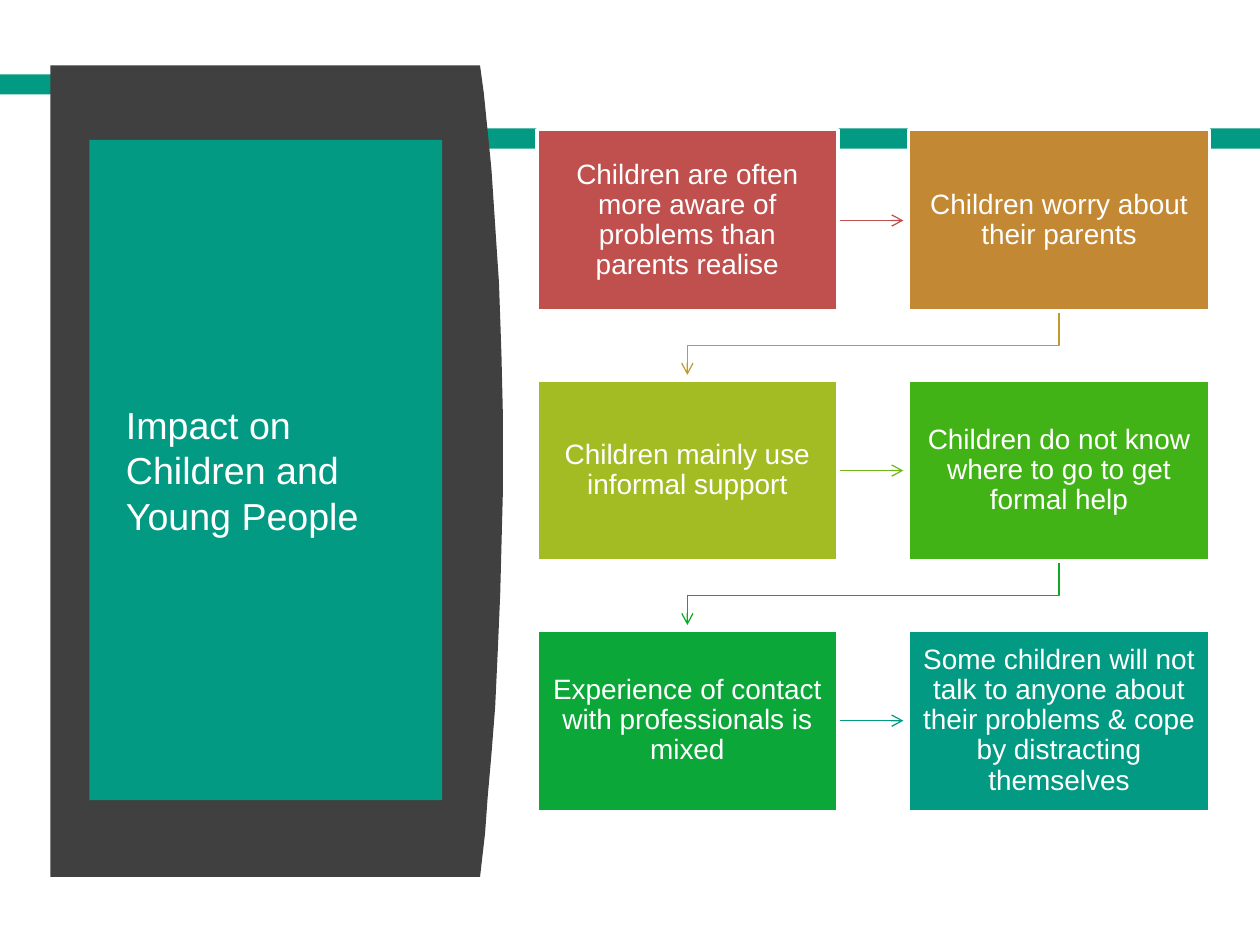
from pptx import Presentation
from pptx.dml.color import RGBColor
from pptx.enum.shapes import MSO_CONNECTOR as CONNECTOR, MSO_SHAPE as SHAPE
from pptx.enum.text import MSO_ANCHOR as ANCHOR, PP_ALIGN as ALIGN
from pptx.oxml.ns import qn
from pptx.util import Inches, Pt
from lxml.etree import SubElement

WHITE = RGBColor(0xFF, 0xFF, 0xFF)
TEAL = RGBColor(0x02, 0x9A, 0x83)
CHARCOAL = RGBColor(0x40, 0x40, 0x40)
RED = RGBColor(0xC0, 0x50, 0x4D)
OCHRE = RGBColor(0xC2, 0x88, 0x34)
OLIVE = RGBColor(0xA4, 0xBC, 0x24)
GREEN = RGBColor(0x42, 0xB3, 0x17)
EMERALD = RGBColor(0x0B, 0xA7, 0x38)
GOLD_LINE = RGBColor(0xC1, 0x9A, 0x30)
LIME_LINE = RGBColor(0x74, 0xB7, 0x1D)
GREEN_LINE = RGBColor(0x0E, 0xAA, 0x24)

STEPS = [
    ("Children are often more aware of problems than parents realise", RED, RED),
    ("Children worry about their parents", OCHRE, GOLD_LINE),
    ("Children mainly use informal support", OLIVE, LIME_LINE),
    ("Children do not know where to go to get formal help", GREEN, GREEN_LINE),
    ("Experience of contact with professionals is mixed", EMERALD, TEAL),
    ("Some children will not talk to anyone about their problems & cope "
     "by distracting themselves", TEAL, None),
]
COLUMNS = 2
GRID_LEFT, GRID_TOP = 4.26, 1.03
BOX_W, BOX_H = 2.39, 1.44
STEP_X, STEP_Y = 2.95, (5 - GRID_TOP) / 2
ARROW_GAP = 0.04

PANEL = [
    (0.4, 0.52), (3.81, 0.52), (3.84, 0.74), (3.87, 1.04), (3.9, 1.34),
    (3.92, 1.64), (3.94, 1.94), (3.96, 2.24), (3.97, 2.53), (3.98, 2.82),
    (3.99, 3.25), (3.99, 3.94), (3.98, 4.33), (3.97, 4.71), (3.95, 5.18),
    (3.93, 5.61), (3.9, 5.99), (3.87, 6.33), (3.85, 6.61), (3.81, 6.96),
    (0.4, 6.96),
]


def add_rect(slide, left, top, width, height, fill, line=None):
    sp = slide.shapes.add_shape(SHAPE.RECTANGLE, Inches(left), Inches(top),
                                Inches(width), Inches(height))
    sp.shadow.inherit = False
    sp.fill.solid()
    sp.fill.fore_color.rgb = fill
    if line is None:
        sp.line.fill.background()
    else:
        sp.line.color.rgb = line
        sp.line.width = Pt(2)
    return sp


def add_outline(slide, points, close):
    start, *others = [(Inches(x), Inches(y)) for x, y in points]
    builder = slide.shapes.build_freeform(*start)
    builder.add_line_segments(others, close=close)
    sp = builder.convert_to_shape()
    sp.shadow.inherit = False
    return sp


def add_panel(slide):
    sp = add_outline(slide, PANEL, True)
    sp.fill.solid()
    sp.fill.fore_color.rgb = CHARCOAL
    sp.line.fill.background()


def add_straight(slide, start, end):
    ends = [Inches(value) for value in (*start, *end)]
    sp = slide.shapes.add_connector(CONNECTOR.STRAIGHT, *ends)
    SubElement(sp._element.spPr, qn("a:effectLst"))
    return sp


def add_elbow(slide, points):
    sp = add_outline(slide, points, False)
    sp.fill.background()
    return sp


def style_arrow(sp, color):
    sp.line.color.rgb = color
    sp.line.width = Pt(0.75)
    ln = sp._element.spPr.find(qn("a:ln"))
    SubElement(ln, qn("a:tailEnd"), type="arrow")


def set_text(sp, text, size, align, spacing, inset_x, inset_y):
    tf = sp.text_frame
    tf.word_wrap = True
    tf.vertical_anchor = ANCHOR.MIDDLE
    tf.margin_left = tf.margin_right = Inches(inset_x)
    tf.margin_top = tf.margin_bottom = Inches(inset_y)
    p = tf.paragraphs[0]
    p.alignment = align
    p.line_spacing = spacing
    r = p.add_run()
    r.text = text
    r.font.name = "Arial"
    r.font.size = Pt(size)
    r.font.color.rgb = WHITE


def box_origin(index):
    row, column = divmod(index, COLUMNS)
    return GRID_LEFT + column * STEP_X, GRID_TOP + row * STEP_Y


def add_arrow(slide, index, color):
    left, top = box_origin(index)
    next_left, next_top = box_origin(index + 1)
    if next_top == top:
        middle = top + BOX_H / 2
        sp = add_straight(slide, (left + BOX_W, middle),
                          (next_left - ARROW_GAP, middle))
    else:
        start_x, end_x = left + BOX_W / 2, next_left + BOX_W / 2
        bottom = top + BOX_H
        turn = (bottom + next_top) / 2
        sp = add_elbow(slide, [(start_x, bottom), (start_x, turn),
                               (end_x, turn), (end_x, next_top - ARROW_GAP)])
    style_arrow(sp, color)


def add_step(slide, index, text, fill, arrow_color):
    if arrow_color is not None:
        add_arrow(slide, index, arrow_color)
    sp = add_rect(slide, *box_origin(index), BOX_W, BOX_H, fill, WHITE)
    set_text(sp, text, 16, ALIGN.CENTER, 0.9, 0.11, 0.11)


def main():
    prs = Presentation()
    prs.slide_width, prs.slide_height = Inches(10), Inches(7.5)
    slide = prs.slides.add_slide(prs.slide_layouts[6])
    add_rect(slide, 0, 0.59, 0.51, 0.16, TEAL)
    add_rect(slide, 3.35, 1.02, 6.65, 0.16, TEAL)
    add_panel(slide)
    title = add_rect(slide, 0.71, 1.11, 2.8, 5.24, TEAL)
    set_text(title, "Impact on Children and Young People", 21.5,
             ALIGN.LEFT, 1.0, 0.29, 0)
    for index, step in enumerate(STEPS):
        add_step(slide, index, *step)
    prs.save("out.pptx")


if __name__ == "__main__":
    main()
